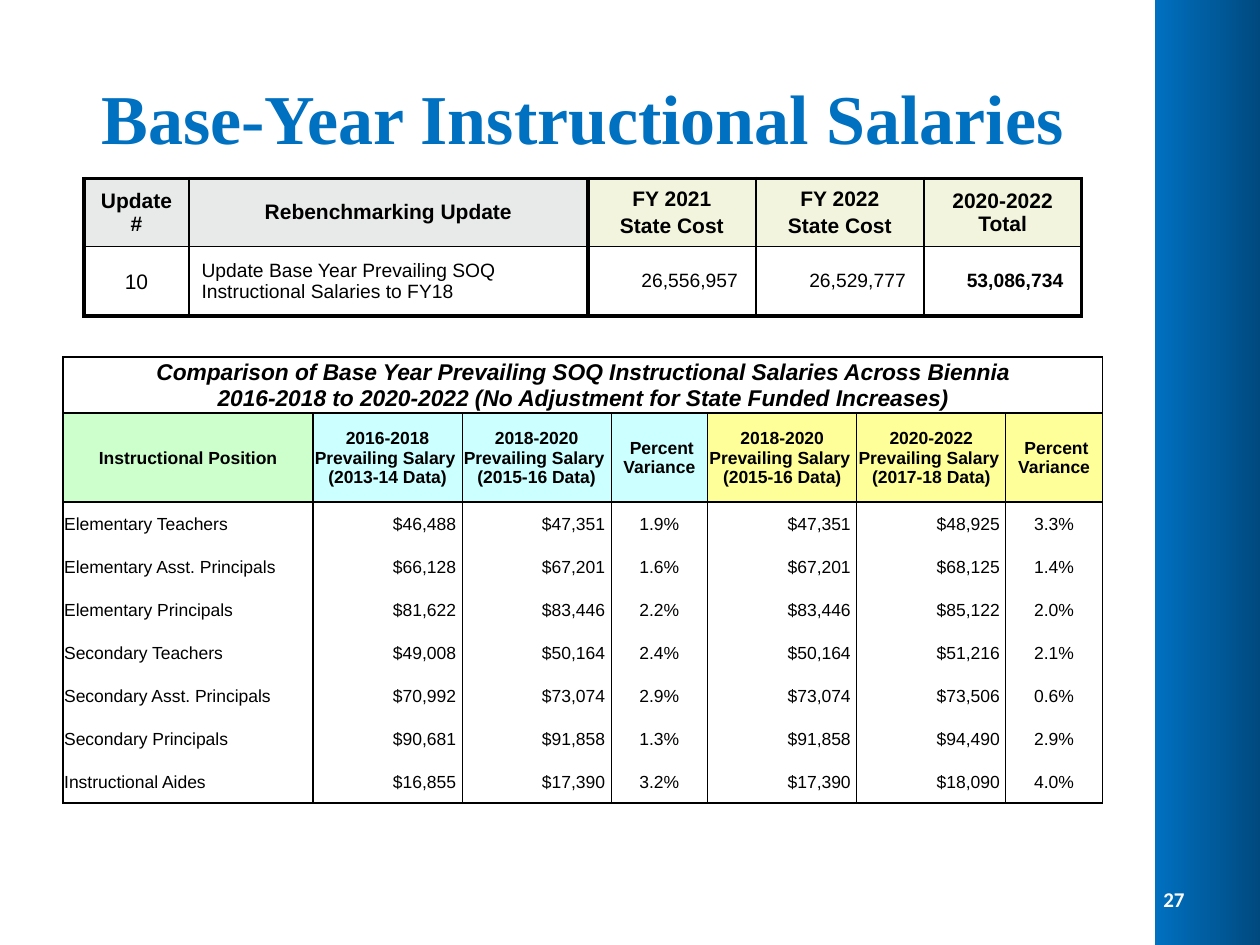
from itertools import pairwise

from lxml import etree
from pptx import Presentation
from pptx import util as u
from pptx.dml import color
from pptx.enum import shapes, text
from pptx.oxml import ns

Pt = u.Pt
ALIGN = {"l": text.PP_ALIGN.LEFT, "c": text.PP_ALIGN.CENTER, "r": text.PP_ALIGN.RIGHT}
NO_GRID = "{2D5ABB26-0587-4C30-8999-92F81FD0307C}"
SIDES = ("left", "top", "right", "bottom")
TIGHT = (0.7, 0.7, 0.7, 0)
ROOMY = (7.2, 3.6, 7.2, 3.6)
SIDE_ONLY = (7.2, 0, 7.2, 0)


def rgb(value):
    return color.RGBColor.from_string(value)


class Deck:
    font = {"name": "Arial", "size": 10, "bold": False, "italic": False}
    ink = "000000"

    def __init__(self, width, height):
        self.file = Presentation()
        self.file.slide_width, self.file.slide_height = Pt(width), Pt(height)
        self.slide = self.file.slides.add_slide(self.file.slide_layouts[6])

    def set_text(self, frame, words, align, gap=0, ink=None, **look):
        frame.text = words
        values = {**self.font, **look}
        values["size"] = Pt(values["size"])
        for number, paragraph in enumerate(frame.paragraphs):
            paragraph.alignment = ALIGN[align]
            if gap and number:
                paragraph.space_before = Pt(gap)
            for run in paragraph.runs:
                for name, value in values.items():
                    setattr(run.font, name, value)
                run.font.color.rgb = rgb(ink or self.ink)

    def band(self, box, start, end):
        band = self.slide.shapes.add_shape(
            shapes.MSO_SHAPE.RECTANGLE, *map(Pt, box))
        band.shadow.inherit = False
        band.line.fill.background()
        band.fill.gradient()
        band.fill.gradient_angle = 0
        for stop, shade in zip(band.fill.gradient_stops, (start, end)):
            stop.color.rgb = rgb(shade)

    def label(self, box, words, align, **look):
        frame = self.slide.shapes.add_textbox(*map(Pt, box)).text_frame
        frame.word_wrap = True
        frame.vertical_anchor = text.MSO_ANCHOR.MIDDLE
        self.set_text(frame, words, align, **look)

    def table(self, left, top, widths, heights):
        grid = self.slide.shapes.add_table(
            len(heights), len(widths), Pt(left), Pt(top),
            Pt(sum(widths)), Pt(sum(heights))).table
        grid.first_row = grid.horz_banding = False
        grid._tbl.tblPr.find(ns.qn("a:tableStyleId")).text = NO_GRID
        for column, width in zip(grid.columns, widths):
            column.width = Pt(width)
        for row, height in zip(grid.rows, heights):
            row.height = Pt(height)
        return grid

    def cell(self, cell, words, align, fill=None, margins=TIGHT, **look):
        for side, margin in zip(SIDES, margins):
            setattr(cell, f"margin_{side}", Pt(margin))
        cell.vertical_anchor = text.MSO_ANCHOR.MIDDLE
        if fill:
            cell.fill.solid()
            cell.fill.fore_color.rgb = rgb(fill)
        else:
            cell.fill.background()
        self.set_text(cell.text_frame, words, align, **look)

    def rules(self, grid, uprights, levels):
        """Draw cell borders from line widths; 0 leaves a line out."""
        for row, (above, below) in zip(grid.rows, pairwise(levels)):
            for cell, (before, after) in zip(row.cells, pairwise(uprights)):
                props = cell._tc.get_or_add_tcPr()
                edges = zip("LRTB", (before, after, above, below))
                for place, (edge, width) in enumerate(edges):
                    line = etree.Element(ns.qn(f"a:ln{edge}"), w=str(Pt(width)))
                    kind = "a:solidFill" if width else "a:noFill"
                    paint = etree.SubElement(line, ns.qn(kind))
                    if width:
                        etree.SubElement(paint, ns.qn("a:srgbClr"), val=self.ink)
                    props.insert(place, line)


GREY, CREAM = "E8EAE9", "F3F4DE"
GREEN, CYAN, YELLOW = "CCFFCC", "CCFFFF", "FFFF99"

COST_HEADS = [("Update #", GREY), ("Rebenchmarking Update", GREY),
              ("FY 2021\nState Cost", CREAM), ("FY 2022\nState Cost", CREAM),
              ("2020-2022 Total", CREAM)]
COST_ROW = [
    ("10", "c", {"size": 12, "margins": TIGHT}),
    ("Update Base Year Prevailing SOQ Instructional Salaries to FY18", "l", {}),
    ("26,556,957 ", "r", {}),
    ("26,529,777 ", "r", {}),
    ("53,086,734 ", "r", {"bold": True}),
]

COMPARISON = ("Comparison of Base Year Prevailing SOQ Instructional Salaries Across Biennia\v"
              "2016-2018 to 2020-2022 (No Adjustment for State Funded Increases)")
PERIODS = [("2016-2018", "2013-14", CYAN), ("2018-2020", "2015-16", CYAN), CYAN,
           ("2018-2020", "2015-16", YELLOW), ("2020-2022", "2017-18", YELLOW), YELLOW]
# Position, salaries of the three biennia, and the two variances
SALARIES = [
    ("Elementary Teachers", "$46,488", "$47,351", "$48,925", "1.9%", "3.3%"),
    ("Elementary Asst. Principals", "$66,128", "$67,201", "$68,125", "1.6%", "1.4%"),
    ("Elementary Principals", "$81,622", "$83,446", "$85,122", "2.2%", "2.0%"),
    ("Secondary Teachers", "$49,008", "$50,164", "$51,216", "2.4%", "2.1%"),
    ("Secondary Asst. Principals", "$70,992", "$73,074", "$73,506", "2.9%", "0.6%"),
    ("Secondary Principals", "$90,681", "$91,858", "$94,490", "1.3%", "2.9%"),
    ("Instructional Aides", "$16,855", "$17,390", "$18,090", "3.2%", "4.0%"),
]


def main():
    deck = Deck(720, 540)

    # Side band and page number
    deck.band((660, 0, 72, 540), "0070C0", "004272")
    deck.label((654, 499, 30, 29), "27", "r", name="Calibri", size=12,
               bold=True, ink="FFFFFF")

    # Salary comparison
    salaries = deck.table(36, 204, [142.8] + [85.2, 85.2, 55.2] * 2,
                          [31, 51] + [24.6] * len(SALARIES))
    salaries.cell(0, 0).merge(salaries.cell(0, 6))
    deck.cell(salaries.cell(0, 0), COMPARISON, "c", "FFFFFF",
              size=13, bold=True, italic=True)
    deck.cell(salaries.cell(1, 0), "Instructional Position", "c", GREEN, bold=True)
    for column, period in enumerate(PERIODS, 1):
        heading, shade = " Percent Variance", period
        if isinstance(period, tuple):
            biennium, data, shade = period
            heading = f"{biennium} Prevailing Salary \v({data} Data)"
        deck.cell(salaries.cell(1, column), heading, "c", shade, bold=True)
    for row, (position, first, second, third, rise, next_rise) in enumerate(SALARIES, 2):
        entries = (position, f"{first} ", f"{second} ", rise,
                   f"{second} ", f"{third} ", next_rise)
        for column, (entry, align) in enumerate(zip(entries, "lrrcrrc")):
            deck.cell(salaries.cell(row, column), entry, align)
    deck.rules(salaries, [1, 1, 0.5, 0.5, 1, 0.5, 0.5, 1],
               [1, 1, 1] + [0] * (len(SALARIES) - 1) + [1])

    # State cost of the update
    costs = deck.table(48, 102, [60, 228, 96, 96, 90], [39, 39.5])
    for column, (heading, shade) in enumerate(COST_HEADS):
        deck.cell(costs.cell(0, column), heading, "c", shade, ROOMY,
                  gap=2.4, size=12, bold=True)
    for column, (entry, align, look) in enumerate(COST_ROW):
        deck.cell(costs.cell(1, column), entry, align,
                  **{"size": 11, "margins": SIDE_ONLY, **look})
    deck.rules(costs, [2.25, 1, 2.25, 1, 1, 2.25], [2.25, 1, 2.25])

    # Title
    deck.label((36, 21.6, 594, 90), "Base-Year Instructional Salaries", "c",
               name="Times New Roman", size=40, bold=True, ink="0070C0")

    deck.file.save("out.pptx")


if __name__ == "__main__":
    main()
